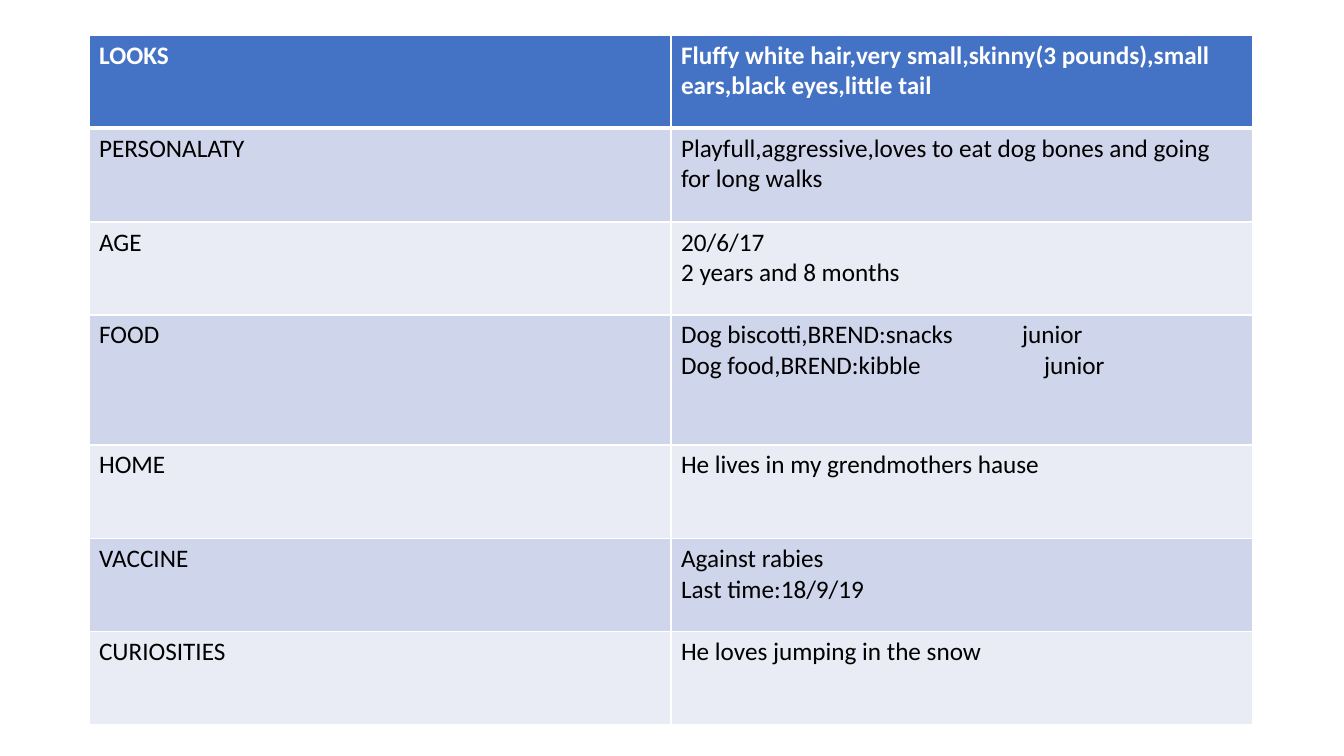
from dataclasses import dataclass
from itertools import pairwise

from lxml.etree import SubElement
from pptx import Presentation
from pptx.dml.color import RGBColor
from pptx.oxml.ns import qn
from pptx.util import Pt

# Content: label, then lines of the description
DOG_FACTS = [
    ("LOOKS", ["Fluffy white hair,very small,skinny(3 pounds),small ears,black eyes,little tail"]),
    ("PERSONALATY", ["Playfull,aggressive,loves to eat dog bones and going for long walks"]),
    ("AGE", ["20/6/17", "2 years and 8 months"]),
    ("FOOD", ["Dog biscotti,BREND:snacks\tjunior", "Dog food,BREND:kibble\tjunior"]),
    ("HOME", ["He lives in my grendmothers hause"]),
    ("VACCINE", ["Against rabies", "Last time:18/9/19"]),
    ("CURIOSITIES", ["He loves jumping in the snow"]),
]
TAB_STOPS = [341, 363]  # px, one for each food line

# Layout in px
SCALE = 914400 / 100.8
SLIDE_W, SLIDE_H = 1344, 756
LEFT, COL_W = 89, 582
ROW_EDGES = [35, 128, 222, 315, 445, 539, 632, 725]


@dataclass(frozen=True)
class Theme:
    font: str = "Calibri"
    size: int = 18
    header: str = "4472C4"
    bands: tuple = ("CFD5EA", "E9EBF5")
    white: str = "FFFFFF"
    text: str = "000000"
    thin: int = 1
    thick: int = 3


THEME = Theme()


def emu(px):
    return round(px * SCALE)


def write_text(tf, lines, color=THEME.text, bold=False, tabs=()):
    for i, line in enumerate(lines):
        p = tf.paragraphs[0] if i == 0 else tf.add_paragraph()
        if "\t" in line:
            tab_list = SubElement(p._p.get_or_add_pPr(), qn("a:tabLst"))
            SubElement(tab_list, qn("a:tab"), pos=str(emu(tabs[i])), algn="l")
        r = p.add_run()
        r.text = line
        r.font.name = THEME.font
        r.font.size = Pt(THEME.size)
        r.font.bold = bold
        r.font.color.rgb = RGBColor.from_string(color)


def set_borders(cell, **widths):
    """Draw white borders; they precede the fill in the cell properties."""
    tc_pr = cell._tc.get_or_add_tcPr()
    for i, side in enumerate("LRTB"):
        width = widths.get(side, THEME.thin)
        ln = SubElement(tc_pr, qn(f"a:ln{side}"), w=str(Pt(width)))
        fill = SubElement(ln, qn("a:solidFill"))
        SubElement(fill, qn("a:srgbClr"), val=THEME.white)
        tc_pr.insert(i, ln)


def main():
    prs = Presentation()
    prs.slide_width, prs.slide_height = emu(SLIDE_W), emu(SLIDE_H)
    s = prs.slides.add_slide(prs.slide_layouts[6])

    # Table grid
    table = s.shapes.add_table(
        len(DOG_FACTS), 2, emu(LEFT), emu(ROW_EDGES[0]),
        emu(2 * COL_W), emu(ROW_EDGES[-1] - ROW_EDGES[0])).table
    for column in table.columns:
        column.width = emu(COL_W)
    for row, (top, bottom) in zip(table.rows, pairwise(ROW_EDGES)):
        row.height = emu(bottom - top)

    # Cells
    for i, (label, details) in enumerate(DOG_FACTS):
        is_header = i == 0
        fill = THEME.header if is_header else THEME.bands[(i - 1) % 2]
        for j, lines in enumerate(([label], details)):
            cell = table.cell(i, j)
            cell.fill.solid()
            cell.fill.fore_color.rgb = RGBColor.from_string(fill)
            set_borders(cell, T=THEME.thick if i == 1 else THEME.thin,
                        B=THEME.thick if is_header else THEME.thin)
            write_text(cell.text_frame, lines, bold=is_header, tabs=TAB_STOPS,
                       color=THEME.white if is_header else THEME.text)

    prs.save("out.pptx")


if __name__ == "__main__":
    main()
